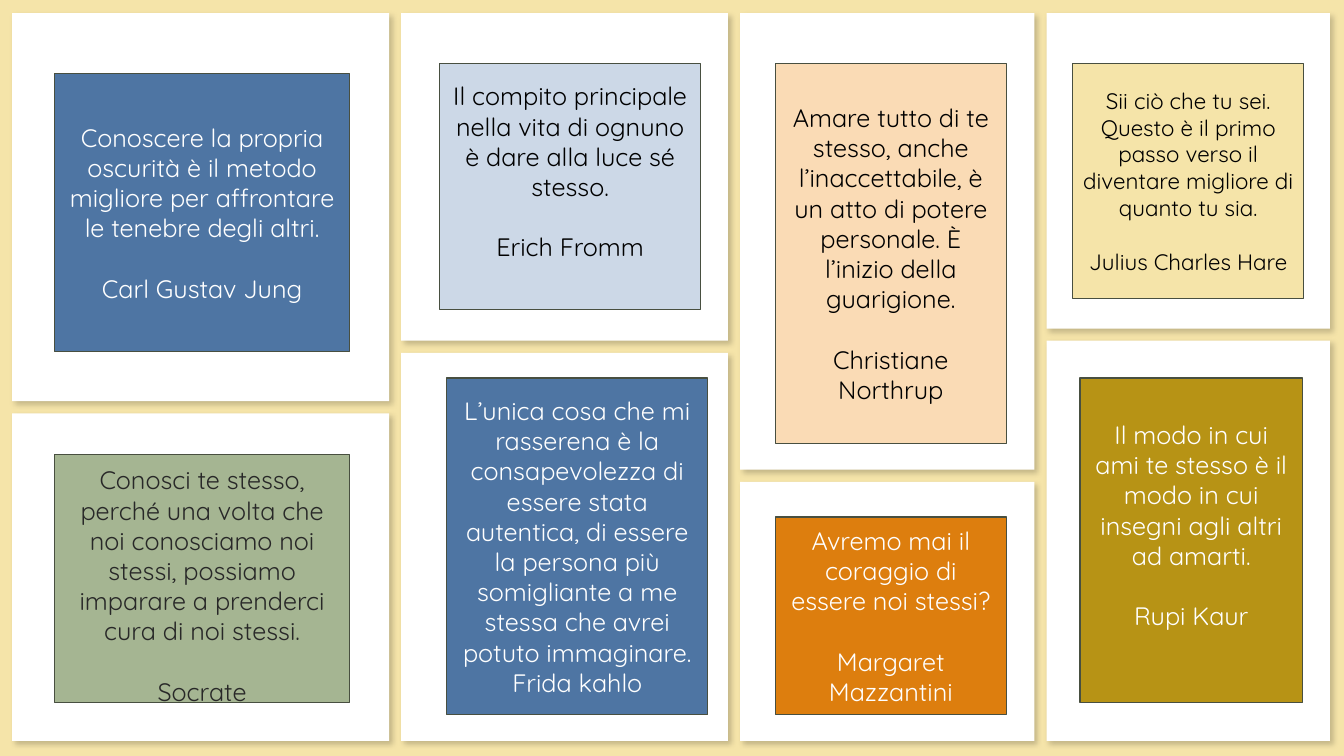
from dataclasses import dataclass

from lxml.etree import SubElement
from pptx import Presentation
from pptx.dml.color import RGBColor
from pptx.enum.shapes import MSO_SHAPE
from pptx.enum.text import MSO_ANCHOR, PP_ALIGN
from pptx.oxml.ns import qn
from pptx.util import Inches, Pt

WHITE = RGBColor(0xFF, 0xFF, 0xFF)
BLACK = RGBColor(0x00, 0x00, 0x00)
CHARCOAL = RGBColor(0x28, 0x28, 0x28)
OUTLINE = RGBColor(0x48, 0x4F, 0x40)
CREAM = RGBColor(0xF5, 0xE4, 0xA9)
BLUE = RGBColor(0x4E, 0x75, 0xA3)
PALE_BLUE = RGBColor(0xCC, 0xD8, 0xE7)
SAGE = RGBColor(0xA5, 0xB5, 0x92)
PEACH = RGBColor(0xFA, 0xDB, 0xB5)
ORANGE = RGBColor(0xDD, 0x7E, 0x0E)
MUSTARD = RGBColor(0xB7, 0x93, 0x15)

FONT = "Quicksand"
LINE_HEIGHT = 1.2
INSET = 0.05


@dataclass
class Quote:
    words: str
    author: str
    box: tuple
    fill: RGBColor
    ink: RGBColor
    size: int = 18
    lines_between: int = 1
    lines_below: int = 0


QUOTES = [
    Quote("Conoscere la propria oscurità è il metodo migliore per affrontare le tenebre degli altri.",
          "Carl Gustav Jung", (0.54, 0.73, 2.93, 2.76), BLUE, WHITE),
    Quote("Il compito principale nella vita di ognuno è dare alla luce sé stesso.",
          "Erich Fromm", (4.36, 0.63, 2.59, 2.44), PALE_BLUE, BLACK, lines_below=1),
    Quote("L’unica cosa che mi rasserena è la consapevolezza di essere stata autentica, "
          "di essere la persona più somigliante a me stessa che avrei potuto immaginare.",
          "Frida kahlo", (4.43, 3.75, 2.59, 3.34), BLUE, WHITE, lines_between=0),
    Quote("Amare tutto di te stesso, anche l’inaccettabile, è un atto di potere personale. "
          "È l’inizio della guarigione.",
          "Christiane Northrup", (7.69, 0.63, 2.29, 3.77), PEACH, BLACK),
    Quote("Avremo mai il coraggio di essere noi stessi?",
          "Margaret Mazzantini", (7.69, 5.13, 2.29, 1.96), ORANGE, WHITE),
    Quote("Sii ciò che tu sei. Questo è il primo passo verso il diventare migliore di quanto tu sia.",
          "Julius Charles Hare", (10.64, 0.63, 2.29, 2.33), CREAM, BLACK, size=16),
    Quote("Il modo in cui ami te stesso è il modo in cui insegni agli altri ad amarti.",
          "Rupi Kaur", (10.71, 3.75, 2.21, 3.22), MUSTARD, WHITE, lines_below=1),
]
SOCRATES = Quote("Conosci te stesso, perché una volta che noi conosciamo noi stessi, "
                 "possiamo imparare a prenderci cura di noi stessi.",
                 "Socrate", (0.54, 4.51, 2.93, 2.46), SAGE, CHARCOAL)
SOCRATES_WORDS_BOX = (0.54, 4.56, 2.93, 2.52)

GAP = 0.12
PANEL_TOP, PANEL_BOTTOM = 0.13, 7.35
PANEL_COLUMNS = [(3.74, 3.85), (3.24, 3.25), (2.92, 4.53), (2.81, 3.13)]


def add_rectangle(slide, box, fill):
    rectangle = slide.shapes.add_shape(MSO_SHAPE.RECTANGLE, *map(Inches, box))
    rectangle.shadow.inherit = False
    rectangle.fill.solid()
    rectangle.fill.fore_color.rgb = fill
    return rectangle


def add_panel(slide, box):
    panel = add_rectangle(slide, box, WHITE)
    panel.line.fill.background()
    effects = panel.element.spPr.find(qn("a:effectLst"))
    shadow = SubElement(effects, qn("a:outerShdw"), blurRad=str(Pt(4)), dist=str(Pt(3)),
                        dir=str(45 * 60000), algn="tl", rotWithShape="0")
    shade = SubElement(shadow, qn("a:srgbClr"), val=str(BLACK))
    SubElement(shade, qn("a:alpha"), val="20000")


def add_card(slide, quote):
    card = add_rectangle(slide, quote.box, quote.fill)
    card.line.color.rgb = OUTLINE
    card.line.width = Pt(1)
    return card


def write_quote(frame, quote, anchor):
    line = quote.size * LINE_HEIGHT
    frame.word_wrap = True
    frame.vertical_anchor = anchor
    frame.margin_bottom = Inches(INSET) + Pt(line * quote.lines_below)
    words = frame.paragraphs[0]
    author = frame.add_paragraph()
    author.space_before = Pt(line * quote.lines_between)
    for paragraph, text in ((words, quote.words), (author, quote.author)):
        paragraph.alignment = PP_ALIGN.CENTER
        run = paragraph.add_run()
        run.text = text
        run.font.name = FONT
        run.font.size = Pt(quote.size)
        run.font.color.rgb = quote.ink


def main():
    deck = Presentation()
    deck.slide_width, deck.slide_height = Inches(13.33), Inches(7.5)
    slide = deck.slides.add_slide(deck.slide_layouts[6])
    slide.background.fill.solid()
    slide.background.fill.fore_color.rgb = CREAM

    left = GAP
    for width, upper_height in PANEL_COLUMNS:
        lower_top = PANEL_TOP + upper_height + GAP
        add_panel(slide, (left, PANEL_TOP, width, upper_height))
        add_panel(slide, (left, lower_top, width, PANEL_BOTTOM - lower_top))
        left += width + GAP

    for quote in QUOTES:
        write_quote(add_card(slide, quote).text_frame, quote, MSO_ANCHOR.MIDDLE)

    add_card(slide, SOCRATES)
    socrates_words = slide.shapes.add_textbox(*map(Inches, SOCRATES_WORDS_BOX))
    write_quote(socrates_words.text_frame, SOCRATES, MSO_ANCHOR.TOP)

    deck.save("out.pptx")


if __name__ == "__main__":
    main()
